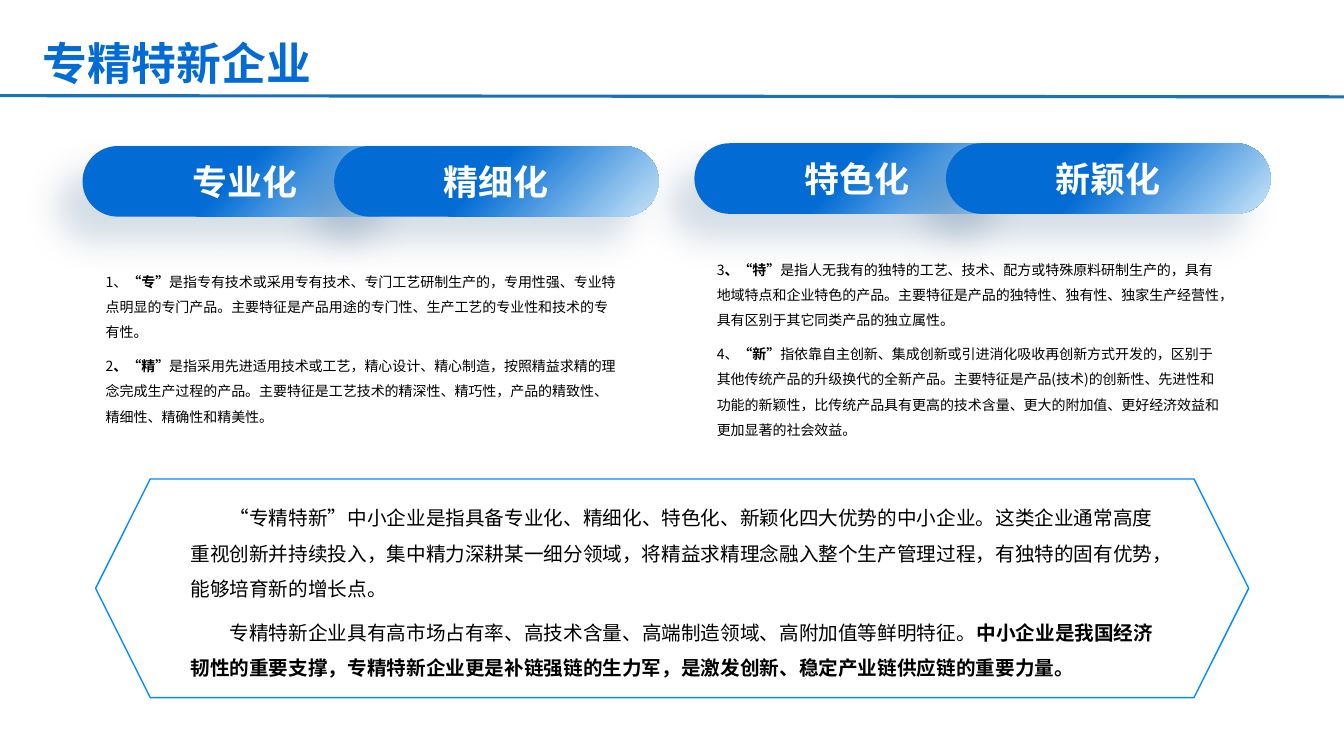
"""Build the slide on specialised, refined, distinctive and novel firms."""
from dataclasses import dataclass

from lxml.etree import SubElement
from pptx import Presentation
from pptx.dml.color import RGBColor as Rgb
from pptx.enum.lang import MSO_LANGUAGE_ID as Lang
from pptx.enum.shapes import MSO_CONNECTOR as Link, MSO_SHAPE as Form
from pptx.enum.text import MSO_ANCHOR as Anchor, MSO_AUTO_SIZE as Fit, PP_ALIGN as Align
from pptx.oxml.ns import qn
from pptx.util import Cm, Pt


@dataclass(frozen=True)
class Theme:
    font: str = "Noto Sans CJK SC"
    blue: str = "026CD4"
    pale: str = "CAE6F8"
    rule: str = "1A73B3"
    edge: str = "008BFF"
    shade: str = "01366A"
    white: str = "FFFFFF"
    black: str = "000000"
    head: int = 32
    label: int = 25
    body: int = 14
    note: int = 10


class Page:
    def __init__(self, slide, theme):
        self.slide = slide
        self.theme = theme

    def place(self, shape, box):
        shape.left, shape.top, shape.width, shape.height = map(Cm, box)

    def run(self, para, text, size, color, bold=False):
        run = para.add_run()
        run.text = text
        font = run.font
        font.size = Pt(size)
        font.bold = bold
        font.color.rgb = Rgb.from_string(color)
        font.name = self.theme.font
        font.language_id = Lang.SIMPLIFIED_CHINESE
        SubElement(run._r.get_or_add_rPr(), qn("a:ea"), typeface=self.theme.font)

    def title(self, text, box):
        shape = self.slide.shapes.title
        self.place(shape, box)
        frame = shape.text_frame
        frame.vertical_anchor = Anchor.BOTTOM
        frame.auto_size = Fit.NONE
        para = frame.paragraphs[0]
        para.alignment = Align.LEFT
        para.line_spacing = 0.9
        self.run(para, text, self.theme.head, self.theme.blue, True)

    def prose(self, shape, paras, size, indent=0):
        frame = shape.text_frame
        frame.word_wrap = True
        frame.auto_size = Fit.SHAPE_TO_FIT_TEXT
        frame.vertical_anchor = Anchor.TOP
        for i, runs in enumerate(paras):
            para = frame.add_paragraph() if i else frame.paragraphs[0]
            props = para._p.get_or_add_pPr()
            props.set("marL", "0")
            props.set("indent", str(Cm(indent)))
            SubElement(props, qn("a:buNone"))
            para.line_spacing = 1.5
            para.space_before = Pt(6 if i else 0)
            for text, bold in runs:
                self.run(para, text, size, self.theme.black, bold)

    def list(self, index, paras, box):
        shape = self.slide.placeholders[index]
        self.place(shape, box)
        self.prose(shape, paras, self.theme.note)

    def text(self, paras, box, indent):
        shape = self.slide.shapes.add_textbox(*map(Cm, box))
        self.prose(shape, paras, self.theme.body, indent)

    def line(self, start, end):
        line = self.slide.shapes.add_connector(Link.STRAIGHT, *map(Cm, start + end))
        line.line.color.rgb = Rgb.from_string(self.theme.rule)
        line.line.width = Pt(2.25)
        SubElement(line._element.spPr, qn("a:effectLst"))

    def pill(self, text, box):
        shape = self.slide.shapes.add_shape(Form.ROUNDED_RECTANGLE, *map(Cm, box))
        shape.adjustments[0] = 0.5
        shape.line.fill.background()
        fill = shape.fill
        fill.gradient()
        fill.gradient_angle = 315
        stops = (0.46, self.theme.blue), (1, self.theme.pale)
        for stop, (place, color) in zip(fill.gradient_stops, stops):
            stop.position = place
            stop.color.rgb = Rgb.from_string(color)
        self.shadow(shape)
        frame = shape.text_frame
        frame.vertical_anchor = Anchor.MIDDLE
        para = frame.paragraphs[0]
        para.alignment = Align.CENTER
        self.run(para, text, self.theme.label, self.theme.white, True)

    def shadow(self, shape):
        shape.shadow.inherit = False
        effect = shape._element.spPr.find(qn("a:effectLst"))
        size = str(Pt(25))
        outer = SubElement(effect, qn("a:outerShdw"), blurRad=size, dist=size,
                           dir=str(135 * 60000), algn="tr", rotWithShape="0")
        color = SubElement(outer, qn("a:srgbClr"), val=self.theme.shade)
        SubElement(color, qn("a:alpha"), val="17000")

    def frame(self, box):
        shape = self.slide.shapes.add_shape(Form.HEXAGON, *map(Cm, box))
        shape.shadow.inherit = False
        shape.fill.background()
        shape.line.color.rgb = Rgb.from_string(self.theme.edge)
        shape.line.width = Pt(1)


LEFT = [
    [("1、", False), ("“专”", True),
     ("是指专有技术或采用专有技术、专门工艺研制生产的，专用性强、专业特点明显的专门产品。"
      "主要特征是产品用途的专门性、生产工艺的专业性和技术的专有性。", False)],
    [("2", False), ("、“精”", True),
     ("是指采用先进适用技术或工艺，精心设计、精心制造，按照精益求精的理念完成生产过程的产品。"
      "主要特征是工艺技术的精深性、精巧性，产品的精致性、精细性、精确性和精美性。", False)],
]
RIGHT = [
    [("3", False), ("、“特”", True),
     ("是指人无我有的独特的工艺、技术、配方或特殊原料研制生产的，具有地域特点和企业特色的产品。"
      "主要特征是产品的独特性、独有性、独家生产经营性，具有区别于其它同类产品的独立属性。", False)],
    [("4、", False), ("“新”", True),
     ("指依靠自主创新、集成创新或引进消化吸收再创新方式开发的，区别于其他传统产品的升级换代的全新产品。"
      "主要特征是产品(技术)的创新性、先进性和功能的新颖性，比传统产品具有更高的技术含量、"
      "更大的附加值、更好经济效益和更加显著的社会效益。", False)],
]
SUMMARY = [
    [("“专精特新”中小企业是指具备专业化、精细化、特色化、新颖化四大优势的中小企业。"
      "这类企业通常高度重视创新并持续投入，集中精力深耕某一细分领域，"
      "将精益求精理念融入整个生产管理过程，有独特的固有优势，能够培育新的增长点。", False)],
    [("专精特新企业具有高市场占有率、高技术含量、高端制造领域、高附加值等鲜明特征。", False),
     ("中小企业是我国经济韧性的重要支撑，专精特新企业更是补链强链的生力军，"
      "是激发创新、稳定产业链供应链的重要力量。", True)],
]
PAIRS = [(2.08, 3.68, ("专业化", "精细化")), (17.5, 3.61, ("特色化", "新颖化"))]


def main():
    deck = Presentation()
    deck.slide_width, deck.slide_height = Cm(33.87), Cm(19.05)
    page = Page(deck.slides.add_slide(deck.slide_layouts[3]), Theme())
    page.line((0, 2.41), (33.87, 2.44))
    page.title("专精特新企业", (0.81, 0.86, 26.44, 1.55))
    for left, top, names in PAIRS:
        for i, name in enumerate(names):
            page.pill(name, (left + i * 6.34, top, 8.18, 1.78))
    page.list(1, LEFT, (2.41, 6.55, 13.44, 4.32))
    page.list(2, RIGHT, (17.81, 6.25, 13.34, 4.95))
    page.text(SUMMARY, (4.55, 12.34, 24.77, 4.95), 0.99)
    page.frame((2.41, 12.07, 29.06, 5.51))
    deck.save("out.pptx")


if __name__ == "__main__":
    main()
